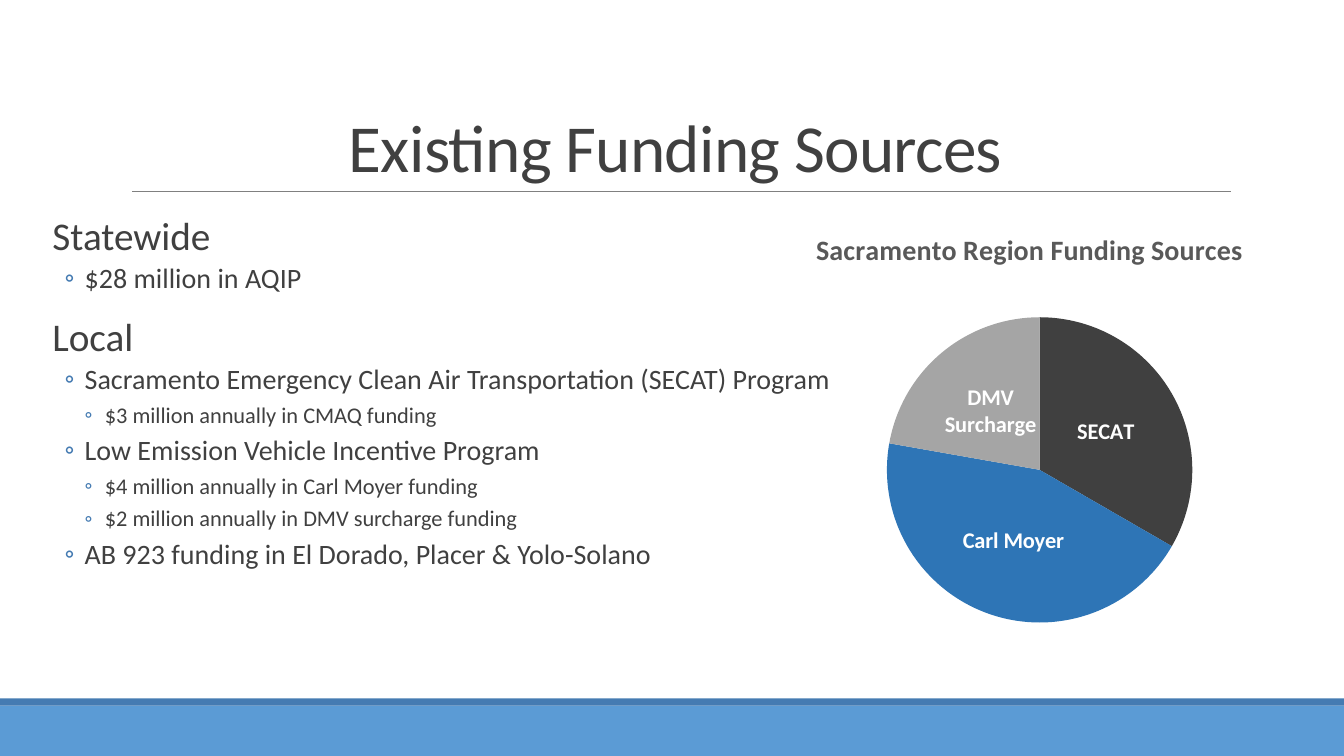
import pptx
import pptx.chart.data
import pptx.dml.color
import pptx.enum.chart
import pptx.enum.shapes
import pptx.enum.text
import pptx.oxml
import pptx.oxml.ns
import pptx.util
from dataclasses import dataclass

Inches = pptx.util.Inches
Pt = pptx.util.Pt


@dataclass(frozen=True)
class Theme:
    font: str = "Calibri"
    dark: str = "404040"
    grey: str = "595959"
    rule: str = "808080"
    white: str = "FFFFFF"
    band: str = "5B9BD5"
    edge: str = "457BB2"
    slices: tuple = ("404040", "2E75B6", "A5A5A5")
    title: int = 48
    levels: tuple = (28, 20, 16)
    chart: int = 20
    label: int = 16


THEME = Theme()
MARGINS = (0.1, 0.42, 0.62)
HANG = 0.2

FUNDS = [
    (0, "Statewide"),
    (1, "$28 million in AQIP"),
    (0, "Local"),
    (1, "Sacramento Emergency Clean Air Transportation (SECAT) Program"),
    (2, "$3 million annually in CMAQ funding"),
    (1, "Low Emission Vehicle Incentive Program"),
    (2, "$4 million annually in Carl Moyer funding"),
    (2, "$2 million annually in DMV surcharge funding"),
    (1, "AB 923 funding in El Dorado, Placer & Yolo-Solano"),
]
SHARES = {"SECAT": 33, "Carl Moyer": 44, "DMV Surcharge": 22}


def rgb(code):
    return pptx.dml.color.RGBColor.from_string(code)


def set_font(font, size, color, bold=False):
    font.name = THEME.font
    font.size = Pt(size)
    font.bold = bold
    font.color.rgb = rgb(color)


def add_run(para, text, size, color, bold=False):
    run = para.add_run()
    run.text = text
    set_font(run.font, size, color, bold)
    return run


def add_xml(parent, tag, **attrs):
    child = pptx.oxml.ns.qn(tag)
    node = parent.makeelement(child, attrs)
    parent.append(node)
    return node


def add_band(slide, top, height, color):
    band = slide.shapes.add_shape(
        pptx.enum.shapes.MSO_SHAPE.RECTANGLE,
        0, Inches(top), Inches(13.33), Inches(height))
    band.shadow.inherit = False
    band.fill.solid()
    band.fill.fore_color.rgb = rgb(color)
    band.line.fill.background()


def add_rule(slide, left, right, top):
    rule = slide.shapes.add_connector(
        pptx.enum.shapes.MSO_CONNECTOR.STRAIGHT,
        Inches(left), Inches(top), Inches(right), Inches(top))
    rule.line.color.rgb = rgb(THEME.rule)
    rule.line.width = Pt(0.5)
    add_xml(rule.element.spPr, "a:effectLst")


def set_title(slide, text):
    title = slide.shapes.title
    title.left, title.top = Inches(1.2), Inches(0.31)
    title.width, title.height = Inches(11), Inches(1.59)
    frame = title.text_frame
    frame.word_wrap = True
    frame.auto_size = pptx.enum.text.MSO_AUTO_SIZE.NONE
    frame.vertical_anchor = pptx.enum.text.MSO_ANCHOR.BOTTOM
    para = frame.paragraphs[0]
    para.alignment = pptx.enum.text.PP_ALIGN.CENTER
    para.line_spacing = 0.85
    run = add_run(para, text, THEME.title, THEME.dark)
    run.font._element.set("spc", "-50")


def set_bullet(para, level):
    """Indent the paragraph and, below the top level, hang a ring bullet."""
    props = para._p.get_or_add_pPr()
    props.set("marL", str(Inches(MARGINS[level])))
    if level == 0:
        props.set("indent", "0")
        add_xml(props, "a:buNone")
        return
    props.set("indent", str(-Inches(HANG)))
    color = add_xml(props, "a:buClr")
    add_xml(color, "a:srgbClr", val=THEME.edge)
    add_xml(props, "a:buFont", typeface=THEME.font)
    add_xml(props, "a:buChar", char="◦")


def add_list(slide, items):
    box = slide.shapes.add_textbox(
        Inches(0.42), Inches(2.1), Inches(7.83), Inches(4.4))
    frame = box.text_frame
    frame.word_wrap = True
    frame.margin_left = frame.margin_right = 0
    for index, (level, text) in enumerate(items):
        para = frame.add_paragraph() if index else frame.paragraphs[0]
        para.level = level
        para.line_spacing = 0.9
        para.space_before = Pt(2 if level else 12)
        para.space_after = Pt(4 if level else 2)
        set_bullet(para, level)
        add_run(para, text, THEME.levels[level], THEME.dark)


def set_layout(parent, index, **sizes):
    """Place a chart part by fractions of the chart's width and height."""
    for old in parent.findall(pptx.oxml.ns.qn("c:layout")):
        parent.remove(old)
    layout = parent.makeelement(pptx.oxml.ns.qn("c:layout"), {})
    parent.insert(index, layout)
    manual = add_xml(layout, "c:manualLayout")
    if "w" in sizes:
        add_xml(manual, "c:layoutTarget", val="inner")
    for axis in "xy":
        add_xml(manual, f"c:{axis}Mode", val="edge")
    for key, value in sizes.items():
        add_xml(manual, f"c:{key}", val=str(value))


def add_pie(slide, title, shares):
    data = pptx.chart.data.CategoryChartData()
    data.categories = list(shares)
    data.add_series("Series 1", list(shares.values()))
    chart = slide.shapes.add_chart(
        pptx.enum.chart.XL_CHART_TYPE.PIE,
        Inches(7.42), Inches(2), Inches(5.67), Inches(4.59), data).chart
    set_font(chart.font, THEME.label, THEME.dark)
    chart.has_legend = False
    chart.has_title = True
    para = chart.chart_title.text_frame.paragraphs[0]
    add_run(para, title, THEME.chart, THEME.grey, True)
    set_layout(chart.chart_title._element, 1, x=0.11, y=0.05)

    plot = chart.plots[0]
    plot.vary_by_categories = True
    set_layout(plot._element.getparent(), 0, x=0.24, y=0.25, w=0.54, h=0.66)
    for index, color in enumerate(THEME.slices):
        fill = plot.series[0].points[index].format.fill
        fill.solid()
        fill.fore_color.rgb = rgb(color)
    plot.has_data_labels = True
    labels = plot.data_labels
    labels.show_category_name = True
    labels.show_value = labels.show_percentage = False
    labels.position = pptx.enum.chart.XL_LABEL_POSITION.CENTER
    set_font(labels.font, THEME.label, THEME.white, True)


def main():
    deck = pptx.Presentation()
    deck.slide_width, deck.slide_height = Inches(13.33), Inches(7.5)
    slide = deck.slides.add_slide(deck.slide_layouts[5])
    add_band(slide, 7, 0.5, THEME.band)
    add_band(slide, 6.93, 0.07, THEME.edge)
    add_rule(slide, 1.31, 12.21, 1.9)
    set_title(slide, "Existing Funding Sources")
    add_list(slide, FUNDS)
    add_pie(slide, "Sacramento Region Funding Sources", SHARES)
    deck.save("out.pptx")


if __name__ == "__main__":
    main()
